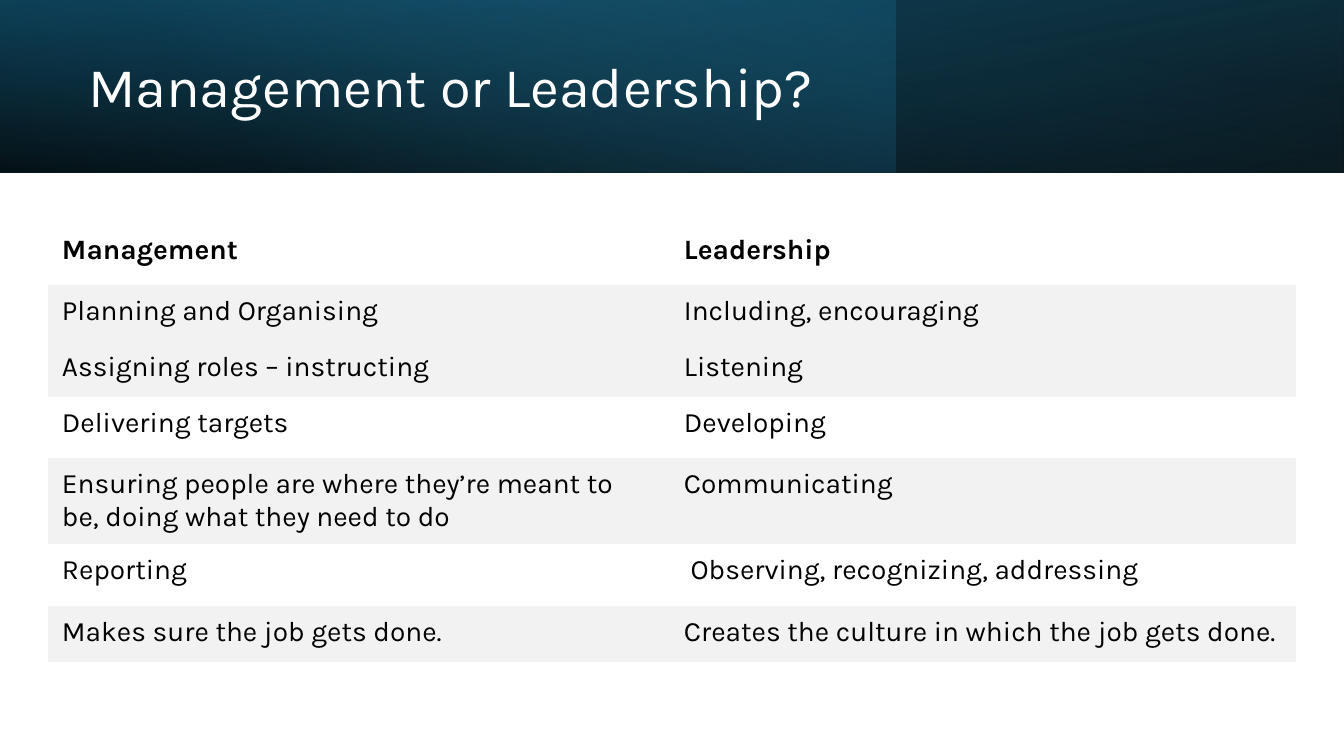
from lxml import etree
from pptx import Presentation
from pptx.dml.color import RGBColor
from pptx.enum.shapes import MSO_SHAPE
from pptx.enum.text import MSO_ANCHOR, MSO_AUTO_SIZE, PP_ALIGN
from pptx.oxml.ns import qn
from pptx.util import Pt

TITLE = "Management or Leadership?"
ROWS = [  # left, right, height, shaded
    ("Management", "Leadership", 61, False),
    ("Planning and Organising", "Including, encouraging", 56, True),
    ("Assigning roles – instructing", "Listening", 56, True),
    ("Delivering targets", "Developing", 61, False),
    ("Ensuring people are where they’re meant to be, doing what they need to do",
     "Communicating", 86, True),
    ("Reporting", " Observing, recognizing, addressing", 62, False),
    ("Makes sure the job gets done.",
     "Creates the culture in which the job gets done.", 56, True),
]
COLS = [622, 626]
COLORS = {"black": "000000", "white": "FFFFFF", "shade": "F2F2F2",
          "deep": "104862", "teal": "156082", "sky": "46B1E1"}
BANDS = [  # width, turn, mirrored, angle, stops as (place %, colour, opacity %)
    (1344, 180, True, 100, [(0, "black", 96), (100, "deep", 100)]),
    (896, 0, False, 140, [(0, "teal", 41), (74, "sky", 0)]),
    (1344, 0, True, 260, [(0, "black", 63), (78, "teal", 15)]),
]
WIDE, HIGH, BAND = 1344, 756, 173
FONT = "Karla"
NO_GRID = "{2D5ABB26-0587-4C30-8999-92F81FD0307C}"


def px(n):
    return round(n * 12192000 / WIDE)


def assign(obj, **values):
    for name, value in values.items():
        setattr(obj, name, value)


def style(par, size, color, bold=False):
    assign(par.font, name=FONT, size=Pt(size), bold=bold)
    par.font.color.rgb = RGBColor.from_string(COLORS[color])


def fade(shape, angle, stops):
    """Fill with a linear gradient whose stops carry opacity."""
    shape.fill.gradient()
    grad = shape.fill._fill._gradFill
    for child in list(grad):
        grad.remove(child)
    grad.set("rotWithShape", "1")
    group = etree.SubElement(grad, qn("a:gsLst"))
    for place, color, alpha in stops:
        stop = etree.SubElement(group, qn("a:gs"), pos=str(place * 1000))
        rgb = etree.SubElement(stop, qn("a:srgbClr"), val=COLORS[color])
        etree.SubElement(rgb, qn("a:alpha"), val=str(alpha * 1000))
    etree.SubElement(grad, qn("a:lin"), ang=str(angle * 60000), scaled="0")


def add_band(slide, width, turn, mirror, angle, stops):
    band = slide.shapes.add_shape(MSO_SHAPE.RECTANGLE, 0, 0, px(width), px(BAND))
    band.shadow.inherit = False
    band.line.fill.background()
    band.rotation = turn
    if mirror:
        band._element.spPr.find(qn("a:xfrm")).set("flipH", "1")
    fade(band, angle, stops)


def add_title(slide):
    title = slide.shapes.title
    assign(title, left=px(78), top=px(27), width=px(778), height=px(124))
    frame = title.text_frame
    frame.text = TITLE
    assign(frame, word_wrap=True, auto_size=MSO_AUTO_SIZE.NONE,
           vertical_anchor=MSO_ANCHOR.MIDDLE)
    par = frame.paragraphs[0]
    assign(par, alignment=PP_ALIGN.LEFT, line_spacing=0.9)
    style(par, 40, "white")
    slide.shapes._spTree.append(title._element)  # bring above the bands


def add_grid(slide):
    high = sum(row[2] for row in ROWS)
    table = slide.shapes.add_table(len(ROWS), len(COLS), px(48), px(224),
                                   px(sum(COLS)), px(high)).table
    assign(table, first_row=False, horz_banding=False)
    table._tbl.tblPr.find(qn("a:tableStyleId")).text = NO_GRID
    for col, width in zip(table.columns, COLS):
        col.width = px(width)
    for r, (left, right, height, shaded) in enumerate(ROWS):
        table.rows[r].height = px(height)
        for c, text in enumerate((left, right)):
            cell = table.cell(r, c)
            cell.text = text
            assign(cell, margin_left=px(14), margin_right=px(14),
                   margin_top=px(10), margin_bottom=px(10))
            style(cell.text_frame.paragraphs[0], 20, "black", bold=r == 0)
            if shaded:
                cell.fill.solid()
                cell.fill.fore_color.rgb = RGBColor.from_string(COLORS["shade"])
            else:
                cell.fill.background()


def main():
    deck = Presentation()
    assign(deck, slide_width=px(WIDE), slide_height=px(HIGH))
    slide = deck.slides.add_slide(deck.slide_layouts[5])
    for band in BANDS:
        add_band(slide, *band)
    add_title(slide)
    add_grid(slide)
    deck.save("out.pptx")


if __name__ == "__main__":
    main()
